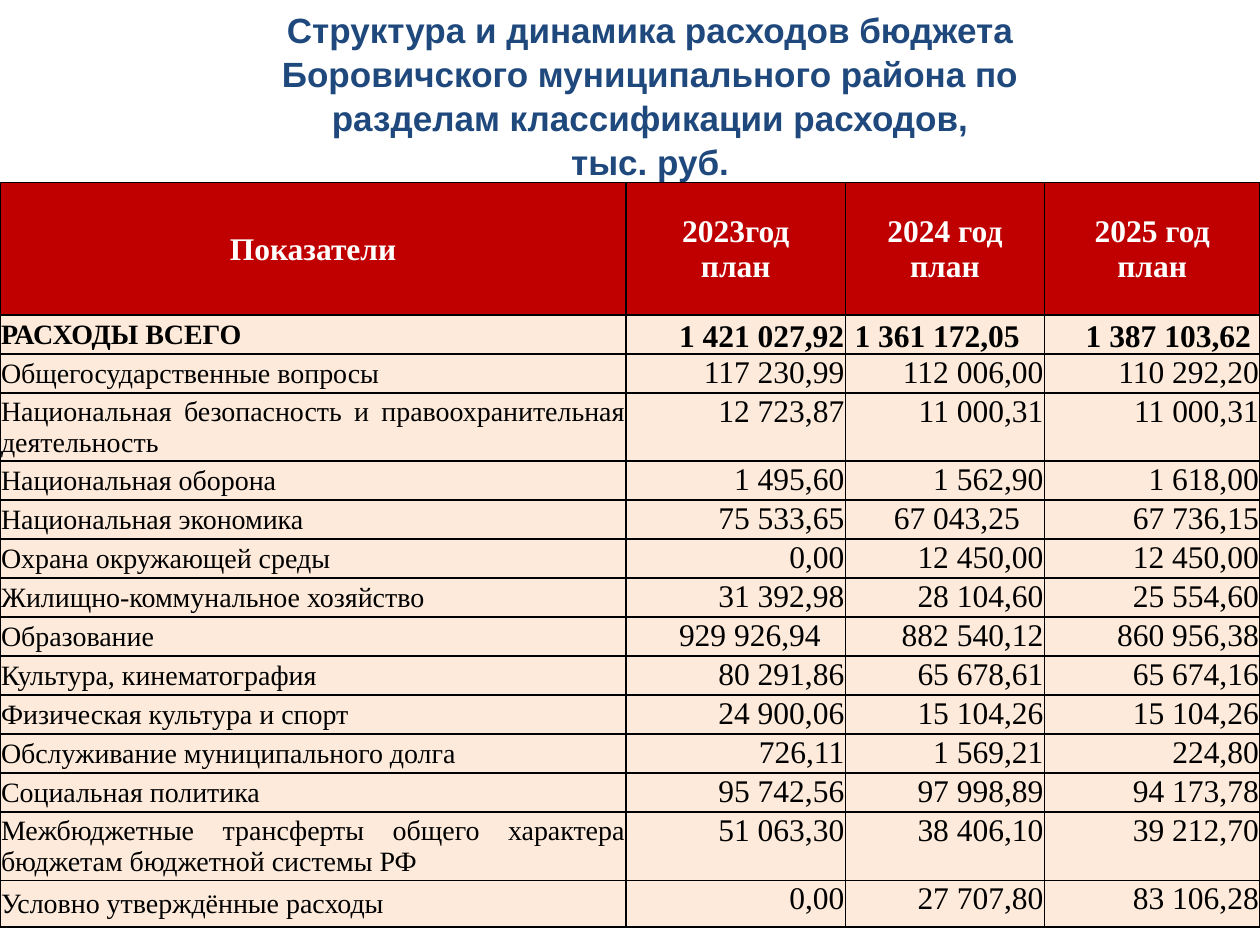
from lxml.etree import SubElement
from pptx import Presentation
from pptx.dml.color import RGBColor
from pptx.enum.text import MSO_ANCHOR, PP_ALIGN
from pptx.oxml.ns import qn
from pptx.util import Pt

COLUMN_WIDTHS = [357.8, 125.3, 113.8, 123.1]
HEADER_HEIGHT, ROW_HEIGHT, TWO_LINE_HEIGHT, LAST_HEIGHT = 75.6, 22.3, 38.9, 26.6
HEADERS = ["Показатели", "2023год\nплан", "2024 год\nплан", "2025 год\nплан"]
EXPENSES = [
    ("РАСХОДЫ ВСЕГО", "1 421 027,92", "1 361 172,05", "1 387 103,62"),
    ("Общегосударственные вопросы", "117 230,99", "112 006,00", "110 292,20"),
    ("Национальная безопасность и правоохранительная деятельность",
     "12 723,87", "11 000,31", "11 000,31"),
    ("Национальная оборона", "1 495,60", "1 562,90", "1 618,00"),
    ("Национальная экономика", "75 533,65", "67 043,25", "67 736,15"),
    ("Охрана окружающей среды", "0,00", "12 450,00", "12 450,00"),
    ("Жилищно-коммунальное хозяйство", "31 392,98", "28 104,60", "25 554,60"),
    ("Образование", "929 926,94", "882 540,12", "860 956,38"),
    ("Культура, кинематография", "80 291,86", "65 678,61", "65 674,16"),
    ("Физическая культура и спорт", "24 900,06", "15 104,26", "15 104,26"),
    ("Обслуживание муниципального долга", "726,11", "1 569,21", "224,80"),
    ("Социальная политика", "95 742,56", "97 998,89", "94 173,78"),
    ("Межбюджетные трансферты общего характера бюджетам бюджетной системы РФ",
     "51 063,30", "38 406,10", "39 212,70"),
    ("Условно утверждённые расходы", "0,00", "27 707,80", "83 106,28"),
]
TWO_LINE_ROWS = {3, 13}
RIGHT_INSETS = {(1, 2): 14.1, (1, 3): 5.1, (5, 2): 14.1, (8, 1): 14.1}


def color(value):
    return RGBColor.from_string(value)


def write_text(frame, text, size=18, font="Times New Roman", fill="000000",
               bold=False, align=PP_ALIGN.LEFT, spacing=None):
    for index, line in enumerate(text.split("\n")):
        paragraph = frame.paragraphs[0] if index == 0 else frame.add_paragraph()
        paragraph.alignment = align
        paragraph.line_spacing = spacing
        run = paragraph.add_run()
        run.text = line
        run.font.size = Pt(size)
        run.font.name = font
        run.font.bold = bold
        run.font.color.rgb = color(fill)


def style_cell(cell, fill, anchor, right_inset=0.6):
    cell.margin_left = cell.margin_top = Pt(0.6)
    cell.margin_right, cell.margin_bottom = Pt(right_inset), Pt(0)
    cell.vertical_anchor = anchor
    properties = cell._tc.get_or_add_tcPr()
    for side in ("a:lnL", "a:lnR", "a:lnT", "a:lnB"):
        line = SubElement(properties, qn(side), w=str(Pt(1)))
        solid = SubElement(line, qn("a:solidFill"))
        SubElement(solid, qn("a:srgbClr"), val="000000")
    cell.fill.solid()
    cell.fill.fore_color.rgb = color(fill)


def add_title(slide, left, top, width, height):
    shape = slide.shapes.add_textbox(Pt(left), Pt(top), Pt(width), Pt(height))
    shape.text_frame.word_wrap = True
    write_text(shape.text_frame,
               "Структура и динамика расходов бюджета Боровичского муниципального "
               "района по разделам классификации расходов,\nтыс. руб.",
               size=20, font="Arial", fill="1F497D", bold=True,
               align=PP_ALIGN.CENTER, spacing=1.05)


def add_expense_table(slide, left, top, width, height):
    table = slide.shapes.add_table(len(EXPENSES) + 1, len(HEADERS), Pt(left), Pt(top),
                                   Pt(width), Pt(height)).table
    table.horz_banding = False
    for column, column_width in zip(table.columns, COLUMN_WIDTHS):
        column.width = Pt(column_width)
    for index, row in enumerate(table.rows):
        row.height = Pt(TWO_LINE_HEIGHT if index in TWO_LINE_ROWS else ROW_HEIGHT)
    table.rows[0].height = Pt(HEADER_HEIGHT)
    table.rows[len(EXPENSES)].height = Pt(LAST_HEIGHT)

    for column, header in enumerate(HEADERS):
        cell = table.cell(0, column)
        style_cell(cell, "C00000", MSO_ANCHOR.MIDDLE)
        write_text(cell.text_frame, header, fill="FFFFFF", bold=True,
                   align=PP_ALIGN.CENTER)
    for row, (name, *amounts) in enumerate(EXPENSES, start=1):
        total = row == 1
        cell = table.cell(row, 0)
        style_cell(cell, "FDEADA", MSO_ANCHOR.MIDDLE)
        write_text(cell.text_frame, name, size=16, bold=total,
                   align=PP_ALIGN.LEFT if total else PP_ALIGN.JUSTIFY)
        for column, amount in enumerate(amounts, start=1):
            cell = table.cell(row, column)
            style_cell(cell, "FDEADA", MSO_ANCHOR.BOTTOM if total else MSO_ANCHOR.TOP,
                       RIGHT_INSETS.get((row, column), 0.6))
            write_text(cell.text_frame, amount, bold=total, align=PP_ALIGN.RIGHT)


def main():
    presentation = Presentation()
    presentation.slide_width, presentation.slide_height = Pt(720), Pt(540)
    slide = presentation.slides.add_slide(presentation.slide_layouts[6])
    add_title(slide, 110.9, 0, 521.3, 104.4)
    add_expense_table(slide, 0, 104.4, 720, 425.3)
    presentation.save("out.pptx")


if __name__ == "__main__":
    main()
